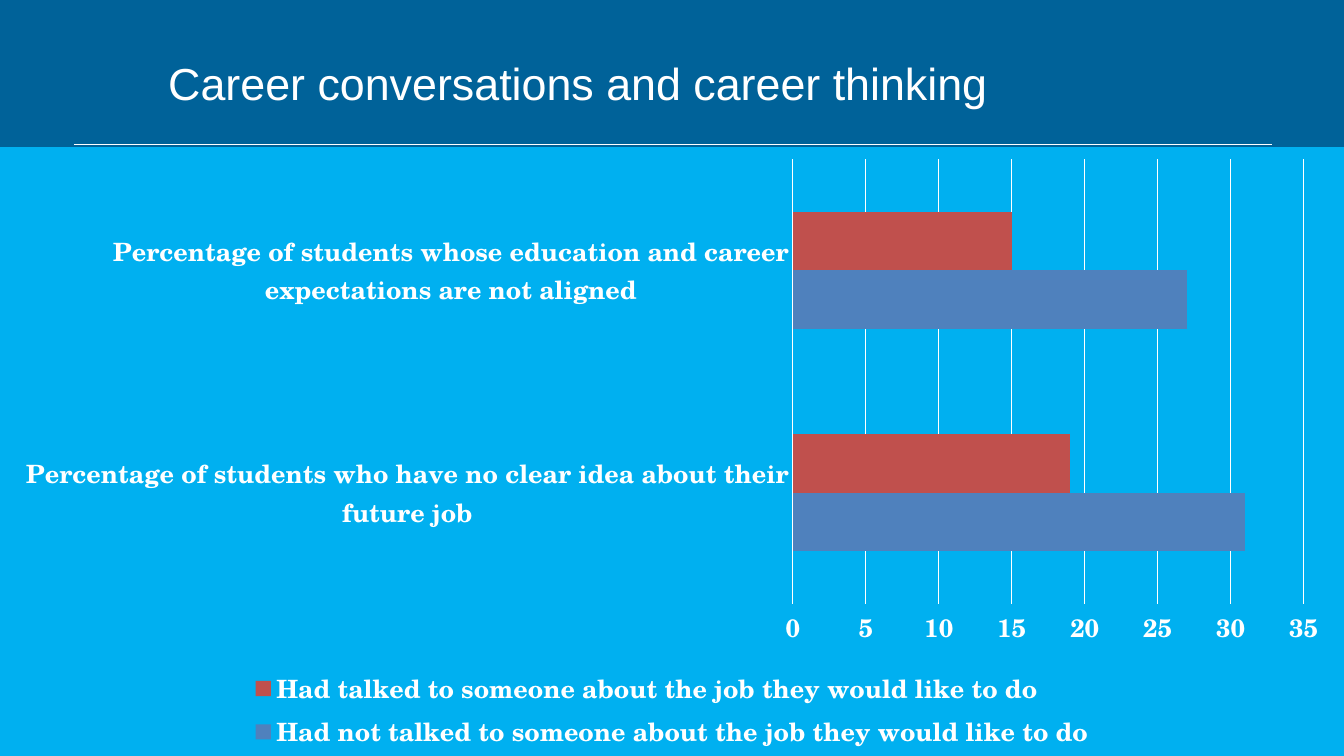
from lxml import etree
from pptx import Presentation
from pptx.chart.data import CategoryChartData as Data
from pptx.dml.color import RGBColor
from pptx.enum.chart import XL_CHART_TYPE as Kind, XL_LEGEND_POSITION as Side
from pptx.enum.chart import XL_TICK_MARK as Tick
from pptx.enum.shapes import MSO_CONNECTOR as Link
from pptx.enum.text import MSO_ANCHOR as Anchor
from pptx.oxml import parse_xml
from pptx.oxml.ns import nsdecls, qn
from pptx.util import Cm, Pt

NAVY = RGBColor(0x00, 0x62, 0x99)
SKY = RGBColor(0x00, 0xB0, 0xF0)
WHITE = RGBColor(0xFF, 0xFF, 0xFF)
BLUE = RGBColor(0x4F, 0x81, 0xBD)
RED = RGBColor(0xC0, 0x50, 0x4D)

TITLE = {"name": "Arial", "size": Pt(32)}
LABEL = {"name": "TeX Gyre Schola", "size": Pt(18), "bold": True}

GROUPS = ["Percentage of students who have no clear idea about their future job",
          "Percentage of students whose education and career expectations are not aligned"]
SERIES = [("Had not talked to someone about the job they would like to do", (31, 27), BLUE),
          ("Had talked to someone about the job they would like to do", (19, 15), RED)]


def style(font, form):
    for key, value in form.items():
        setattr(font, key, value)
    font.color.rgb = WHITE


def stroke(line, width):
    line.color.rgb = WHITE
    line.width = Pt(width)


def place(part, x, y, w, h, inner=False):
    """Fix a chart part at fractions of the chart area."""
    old = part.find(qn("c:layout"))
    if old is not None:
        part.remove(old)
    tags = '<c:layoutTarget val="inner"/>' if inner else ""
    tags += '<c:xMode val="edge"/><c:yMode val="edge"/>'
    for tag, value in zip("xywh", (x, y, w, h)):
        tags += f'<c:{tag} val="{value}"/>'
    node = parse_xml(f'<c:layout {nsdecls("c")}><c:manualLayout>{tags}'
                     '</c:manualLayout></c:layout>')
    if inner:
        part.insert(0, node)
    else:
        part.find(qn("c:legendPos")).addnext(node)


def add_head(slide, left, top, width, height):
    # Title
    box = slide.shapes.add_textbox(left + Cm(2.13), top, width - Cm(2.75), height - Cm(0.14))
    frame = box.text_frame
    frame.word_wrap = True
    frame.vertical_anchor = Anchor.MIDDLE
    frame.text = "Career conversations and career thinking"
    style(frame.paragraphs[0].runs[0].font, TITLE)
    # Rule below the title
    base = top + height
    rule = slide.shapes.add_connector(Link.STRAIGHT, left, base, left + width, base)
    stroke(rule.line, 0.5)
    etree.SubElement(rule._element.spPr, qn("a:effectLst"))


def add_bars(slide, left, top, width, height):
    data = Data()
    data.categories = GROUPS
    for name, values, _ in SERIES:
        data.add_series(name, values)
    chart = slide.shapes.add_chart(Kind.BAR_CLUSTERED, left, top, width, height, data).chart
    chart.has_title = False
    style(chart.font, LABEL)

    # Background
    fill = parse_xml(f'<c:spPr {nsdecls("c", "a")}><a:solidFill><a:srgbClr val="{SKY}"/>'
                     '</a:solidFill><a:ln><a:noFill/></a:ln></c:spPr>')
    space = chart._chartSpace
    space.find(qn("c:chart")).addnext(fill)

    # Bars
    plot = chart.plots[0]
    plot.gap_width = 182
    plot.overlap = 0
    plot.vary_by_categories = False
    for bars, (_, _, color) in zip(plot.series, SERIES):
        bars.format.fill.solid()
        bars.format.fill.fore_color.rgb = color

    # Axes
    for axis in (chart.category_axis, chart.value_axis):
        axis.major_tick_mark = axis.minor_tick_mark = Tick.NONE
        style(axis.tick_labels.font, LABEL)
    stroke(chart.category_axis.format.line, 0.75)
    scale = chart.value_axis
    scale.minimum_scale, scale.maximum_scale, scale.major_unit = 0, 35, 5
    scale.format.line.fill.background()
    stroke(scale.major_gridlines.format.line, 0.75)
    place(space.find(".//" + qn("c:plotArea")), 0.59, 0.02, 0.38, 0.73, inner=True)

    # Legend
    chart.has_legend = True
    legend = chart.legend
    legend.position = Side.BOTTOM
    legend.include_in_layout = False
    style(legend.font, LABEL)
    place(legend._element, 0.18, 0.85, 0.64, 0.15)


def main():
    deck = Presentation()
    deck.slide_width, deck.slide_height = Cm(33.87), Cm(19.05)
    slide = deck.slides.add_slide(deck.slide_layouts[6])
    slide.background.fill.solid()
    slide.background.fill.fore_color.rgb = NAVY
    add_head(slide, Cm(1.86), Cm(0.66), Cm(30.2), Cm(2.97))
    add_bars(slide, 0, Cm(3.71), deck.slide_width, Cm(15.34))
    deck.save("out.pptx")


if __name__ == "__main__":
    main()
